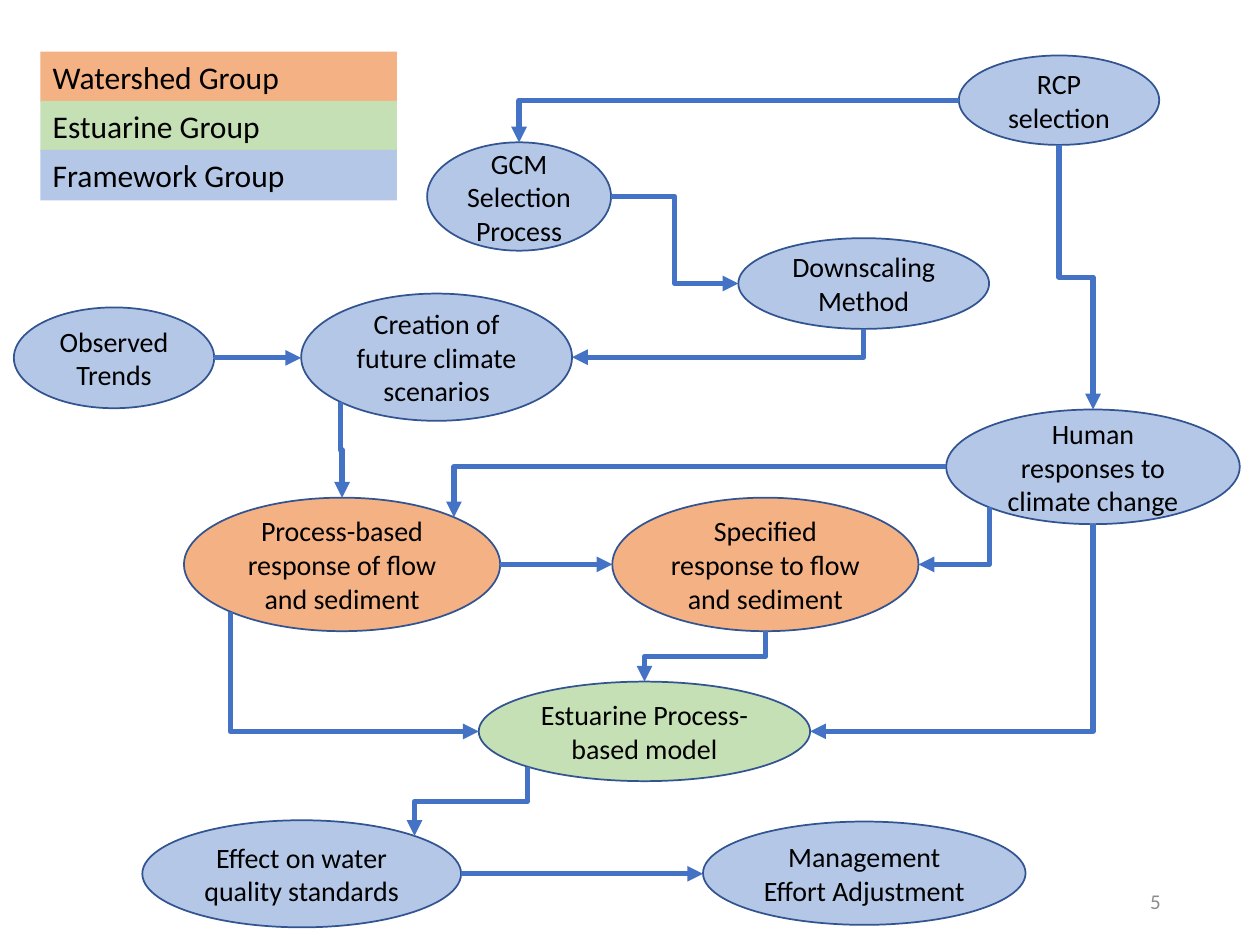
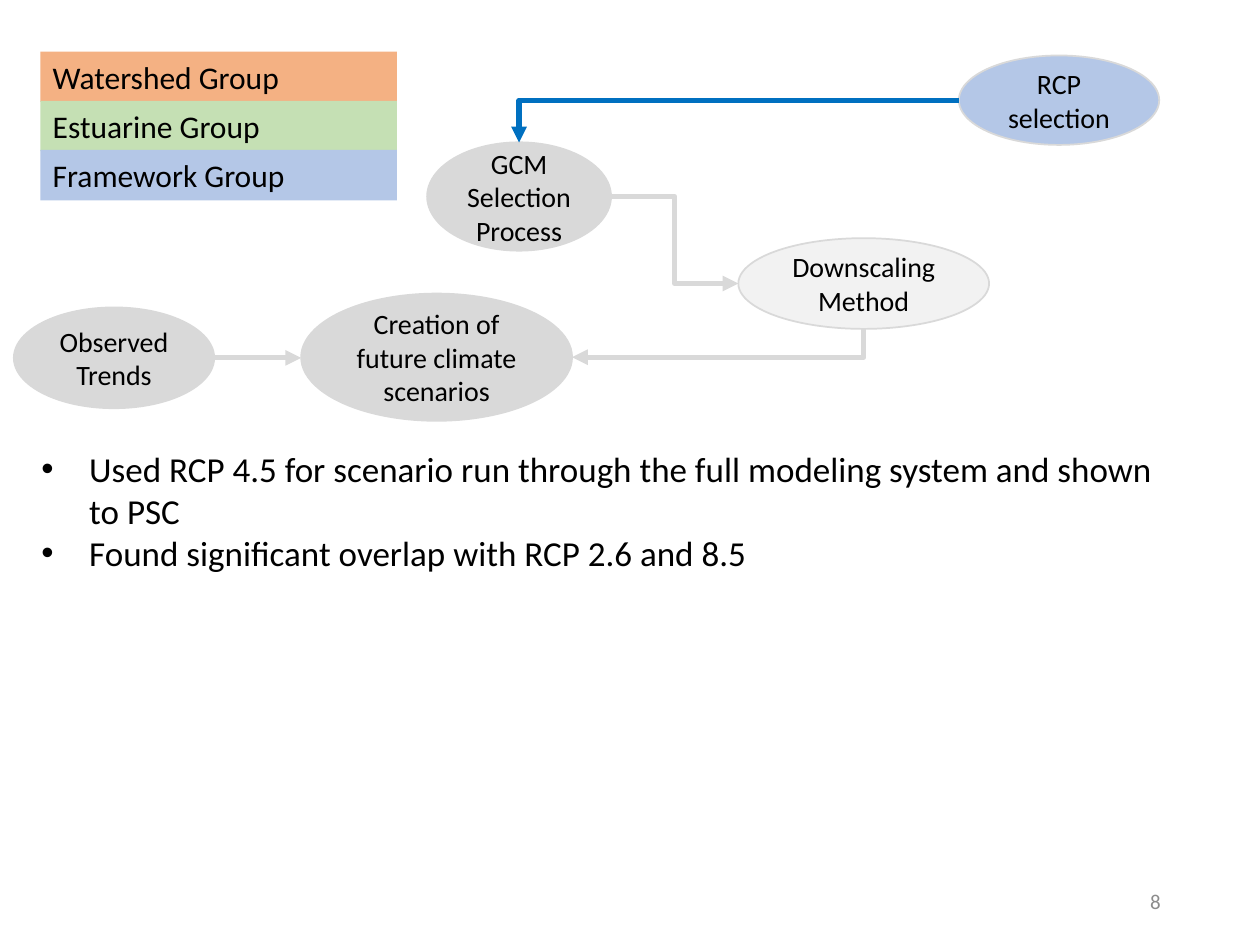
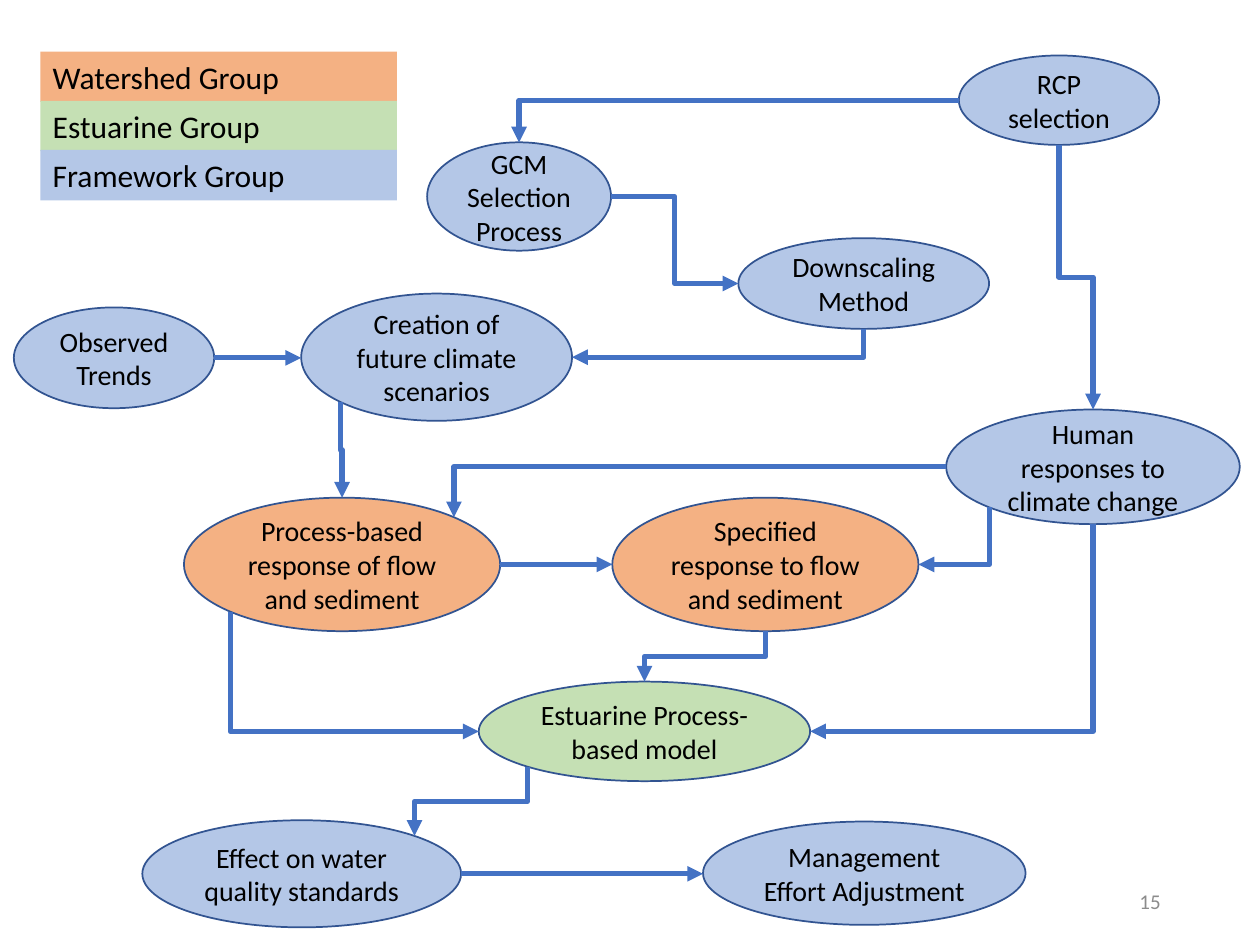
from math import sqrt
from typing import NamedTuple

from lxml.etree import SubElement
from pptx import Presentation
from pptx.dml.color import RGBColor
from pptx.enum.shapes import MSO_CONNECTOR, MSO_SHAPE
from pptx.enum.text import MSO_ANCHOR as ANCHOR, MSO_AUTO_SIZE as AUTO_SIZE, PP_ALIGN as ALIGN
from pptx.oxml.ns import qn
from pptx.shapes.autoshape import Shape
from pptx.slide import Slide
from pptx.util import Emu, Inches, Pt

FONT = "Calibri"
COLS, ROWS = 100, 75
WIDTH, HEIGHT = Inches(10), Inches(7.5)

COLORS = {
    "watershed": "F4B183",
    "estuarine": "C5E0B4",
    "framework": "B4C7E7",
    "outline": "325491",
    "link": "4472C4",
    "active_link": "0070C0",
    "muted": "D9D9D9",
    "pale": "F2F2F2",
    "text": "000000",
    "number": "8C8C8C",
}


class Box(NamedTuple):
    """A place on the grid, in columns and rows."""
    col: float
    row: float
    cols: float
    rows: float

    def emu(self) -> tuple[Emu, Emu, Emu, Emu]:
        return x(self.col), y(self.row), x(self.cols), y(self.rows)


class Step(NamedTuple):
    text: str
    group: str
    box: Box


class Link(NamedTuple):
    start: str
    start_site: str
    end: str
    end_site: str


class Site(NamedTuple):
    """A connection site of an ellipse: its index and its offset in radii."""
    idx: int
    dx: float
    dy: float


DIAG = sqrt(0.5)
SITES = {
    "top": Site(0, 0, -1),
    "left": Site(2, -1, 0),
    "bottom left": Site(3, -DIAG, DIAG),
    "bottom": Site(4, 0, 1),
    "right": Site(6, 1, 0),
    "top right": Site(7, DIAG, -DIAG),
}
SIDEWAYS = {"left", "right"}

# (starts downward, runs to the left) -> rotation in degrees, flip attribute
TURNS = {
    (False, False): (0, None),
    (False, True): (180, "flipV"),
    (True, False): (270, "flipH"),
    (True, True): (90, None),
}

STEPS = {
    "gcm": Step("GCM Selection Process", "framework", Box(33.9, 11.3, 14.6, 8.6)),
    "downscaling": Step("Downscaling Method", "framework", Box(58.6, 18.9, 19.9, 7.2)),
    "trends": Step("Observed Trends", "framework", Box(1.1, 24.4, 15.9, 8)),
    "scenarios": Step("Creation of future climate scenarios", "framework", Box(23.9, 23.3, 21.5, 10.1)),
    "rcp": Step("RCP selection", "framework", Box(76.1, 4.4, 15.9, 7.1)),
    "process": Step("Process-based response of flow and sediment", "watershed", Box(14.6, 39.5, 25.1, 10.6)),
    "specified": Step("Specified response to flow and sediment", "watershed", Box(48.6, 39.5, 24.3, 10.6)),
    "human": Step("Human responses to climate change", "framework", Box(75.1, 32.5, 23.3, 9.1)),
    "estuary": Step("Estuarine Process-based model", "estuarine", Box(38, 54.1, 26.3, 7.9)),
    "quality": Step("Effect on water quality standards", "framework", Box(11.3, 65.1, 25.3, 8.5)),
    "management": Step("Management Effort Adjustment", "framework", Box(55.8, 65.2, 25.6, 8.2)),
}

LINKS = [
    Link("rcp", "left", "gcm", "top"),
    Link("gcm", "right", "downscaling", "left"),
    Link("downscaling", "bottom", "scenarios", "right"),
    Link("trends", "right", "scenarios", "left"),
    Link("rcp", "bottom", "human", "top"),
    Link("scenarios", "bottom left", "process", "top"),
    Link("human", "left", "process", "top right"),
    Link("human", "bottom left", "specified", "right"),
    Link("human", "bottom", "estuary", "right"),
    Link("process", "right", "specified", "left"),
    Link("process", "bottom left", "estuary", "left"),
    Link("specified", "bottom", "estuary", "top"),
    Link("estuary", "bottom left", "quality", "top right"),
    Link("quality", "right", "management", "left"),
]

CLIMATE_FILLS = {
    "gcm": "muted",
    "downscaling": "pale",
    "trends": "muted",
    "scenarios": "muted",
    "rcp": "framework",
}

RCP_NOTES = [
    "Used RCP 4.5 for scenario run through the full modeling system and shown to PSC",
    "Found significant overlap with RCP 2.6 and 8.5",
]


def x(cols: float) -> Emu:
    return Emu(round(WIDTH * cols / COLS))


def y(rows: float) -> Emu:
    return Emu(round(HEIGHT * rows / ROWS))


def rgb(name: str) -> RGBColor:
    return RGBColor.from_string(COLORS[name])


def write(sp: Shape, lines: list[str], size: int, color: str = "text",
          align: ALIGN = ALIGN.LEFT, anchor: ANCHOR = ANCHOR.TOP) -> None:
    tf = sp.text_frame
    tf.word_wrap = True
    tf.vertical_anchor = anchor
    for i, line in enumerate(lines):
        p = tf.add_paragraph() if i else tf.paragraphs[0]
        p.alignment = align
        r = p.add_run()
        r.text = line
        r.font.name, r.font.size = FONT, Pt(size)
        r.font.color.rgb = rgb(color)


def add_filled(s: Slide, kind: MSO_SHAPE, box: Box, fill: str) -> Shape:
    sp = s.shapes.add_shape(kind, *box.emu())
    sp.shadow.inherit = False
    sp.fill.solid()
    sp.fill.fore_color.rgb = rgb(fill)
    return sp


def add_step(s: Slide, step: Step, fill: str, outline: str) -> Shape:
    sp = add_filled(s, MSO_SHAPE.OVAL, step.box, fill)
    sp.line.color.rgb = rgb(outline)
    sp.line.width = Pt(1)
    write(sp, [step.text], 16, align=ALIGN.CENTER, anchor=ANCHOR.MIDDLE)
    return sp


def site_point(sp: Shape, site: Site) -> tuple[float, float]:
    return (sp.left + sp.width / 2 * (1 + site.dx),
            sp.top + sp.height / 2 * (1 + site.dy))


def add_link(s: Slide, link: Link, ovals: dict[str, Shape], color: str) -> None:
    """Glue an elbow arrow to two ovals, turned so that it leaves its start site outward."""
    start, end = ovals[link.start], ovals[link.end]
    start_site, end_site = SITES[link.start_site], SITES[link.end_site]
    x1, y1 = site_point(start, start_site)
    x2, y2 = site_point(end, end_site)
    downward = link.start_site not in SIDEWAYS
    one_bend = downward == (link.end_site in SIDEWAYS)
    w, h = abs(x2 - x1), abs(y2 - y1)
    if downward:
        w, h = h, w
    left, top = (x1 + x2 - w) / 2, (y1 + y2 - h) / 2
    corners = [Emu(round(v)) for v in (left, top, left + w, top + h)]
    c = s.shapes.add_connector(MSO_CONNECTOR.ELBOW, *corners)
    c.line.color.rgb = rgb(color)
    c.line.width = Pt(3)

    spPr = c.element.spPr
    rotation, flip = TURNS[downward, x2 < x1]
    xfrm = spPr.find(qn("a:xfrm"))
    xfrm.set("rot", str(rotation * 60000))
    if flip:
        xfrm.set(flip, "1")
    if one_bend:
        spPr.find(qn("a:prstGeom")).set("prst", "bentConnector2")
    SubElement(spPr.find(qn("a:ln")), qn("a:tailEnd"), type="triangle")
    SubElement(spPr, qn("a:effectLst"))

    glue = c.element.nvCxnSpPr.cNvCxnSpPr
    for tag, sp, site in (("a:stCxn", start, start_site), ("a:endCxn", end, end_site)):
        SubElement(glue, qn(tag), id=str(sp.shape_id), idx=str(site.idx))


def add_legend(s: Slide) -> None:
    for i, group in enumerate(("watershed", "estuarine", "framework")):
        sp = add_filled(s, MSO_SHAPE.RECTANGLE, Box(3.2, 4.1 + 3.9 * i, 28.3, 4), group)
        sp.line.fill.background()
        write(sp, [f"{group.title()} Group"], 18)
        sp.text_frame.auto_size = AUTO_SIZE.SHAPE_TO_FIT_TEXT


def add_notes_list(s: Slide, lines: list[str], box: Box) -> None:
    sp = s.shapes.add_textbox(*box.emu())
    write(sp, lines, 20)
    for p in sp.text_frame.paragraphs:
        pPr = p._p.get_or_add_pPr()
        pPr.set("marL", str(x(3.8)))
        pPr.set("indent", str(-x(3.8)))
        SubElement(pPr, qn("a:buFont"), typeface="Arial")
        SubElement(pPr, qn("a:buChar"), char="•")


def add_flow_slide(prs: Presentation, number: int, fills: dict[str, str], outline: str,
                   link_color: str, first_link_color: str) -> Slide:
    """Draw the steps named in fills, the links among them, the legend and the slide number."""
    s = prs.slides.add_slide(prs.slide_layouts[6])
    ovals = {key: add_step(s, STEPS[key], fill, outline) for key, fill in fills.items()}
    for link in LINKS:
        if link.start in ovals and link.end in ovals:
            add_link(s, link, ovals, first_link_color if link is LINKS[0] else link_color)
    add_legend(s)
    sp = s.shapes.add_textbox(*Box(70.6, 69.5, 22.5, 4).emu())
    write(sp, [str(number)], 12, "number", ALIGN.RIGHT, ANCHOR.MIDDLE)
    return s


def main() -> None:
    prs = Presentation()
    prs.slide_width, prs.slide_height = WIDTH, HEIGHT
    group_fills = {key: step.group for key, step in STEPS.items()}

    add_flow_slide(prs, 5, group_fills, "outline", "link", "link")
    s = add_flow_slide(prs, 8, CLIMATE_FILLS, "muted", "muted", "active_link")
    add_notes_list(s, RCP_NOTES, Box(2.3, 35, 92.2, 14.5))
    add_flow_slide(prs, 15, group_fills, "outline", "link", "link")

    prs.save("out.pptx")


if __name__ == "__main__":
    main()
